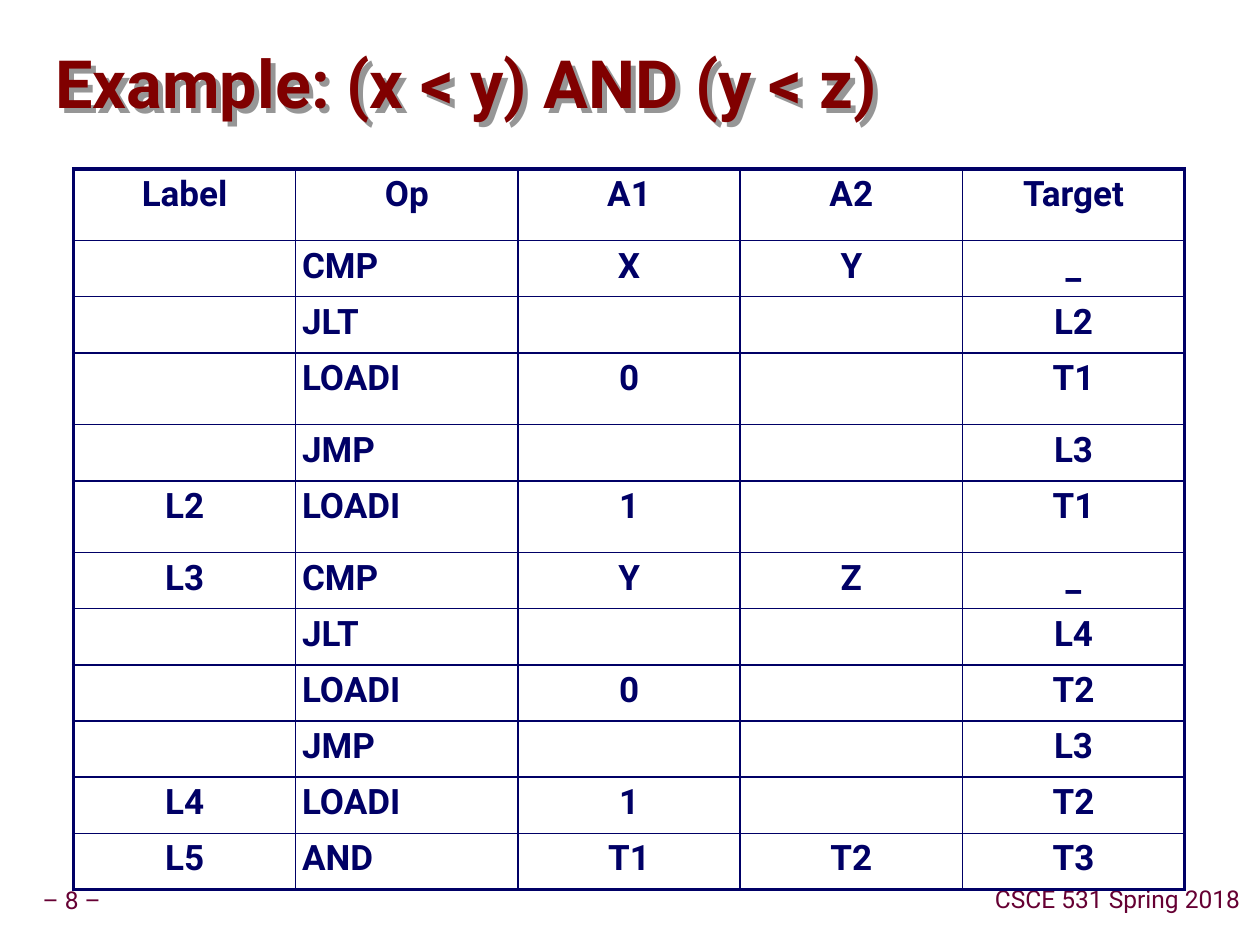
"""Build the slide showing quadruples for a short-circuit comparison."""
import dataclasses
import typing

import lxml.etree
import pptx
import pptx.dml.color
import pptx.enum.text
import pptx.oxml.ns
import pptx.util

Pt = pptx.util.Pt
qn = pptx.oxml.ns.qn
Align = pptx.enum.text.PP_ALIGN


@dataclasses.dataclass(frozen=True)
class TextStyle:
    """Look of a run and its line spacing."""
    size: float
    color: str
    bold: bool
    line_spacing: float


@dataclasses.dataclass(frozen=True)
class Theme:
    """Colours, type sizes and line widths of the slide."""
    font: str = "Roboto"
    title: TextStyle = TextStyle(38, "800000", True, 0.87)
    cell: TextStyle = TextStyle(20, "000066", True, 0.95)
    footer: TextStyle = TextStyle(14, "660033", False, 0.9)
    shadow: str = "969696"
    inner_line: float = 1
    outer_line: float = 2.25
    inset: float = 3.6


@dataclasses.dataclass(frozen=True)
class Label:
    """A text box with its place in points."""
    text: str
    left: float
    top: float
    width: float
    height: float
    style: TextStyle
    align: Align
    inset: float
    wrap: bool


class Quad(typing.NamedTuple):
    """One row of the instruction table."""
    label: str
    op: str
    a1: str
    a2: str
    target: str
    height: float = 32.1


THEME = Theme()
TALL = 41
TITLE = Label("Example: (x < y) AND (y < z)", 31.7, 19.4, 686, 61.2,
              THEME.title, Align.LEFT, 0, True)
FOOTERS = (
    Label("– 8 –", 17.3, 504, 47.5, 22.3, THEME.footer, Align.CENTER, THEME.inset, False),
    Label("CSCE 531 Spring 2018", 561.6, 503.3, 154, 22.3,
          THEME.footer, Align.CENTER, THEME.inset, False),
)
QUADS = (
    Quad("Label", "Op", "A1", "A2", "Target", TALL),
    Quad("", "CMP", "X", "Y", "_"),
    Quad("", "JLT", "", "", "L2"),
    Quad("", "LOADI", "0", "", "T1", TALL),
    Quad("", "JMP", "", "", "L3"),
    Quad("L2", "LOADI", "1", "", "T1", TALL),
    Quad("L3", "CMP", "Y", "Z", "_"),
    Quad("", "JLT", "", "", "L4"),
    Quad("", "LOADI", "0", "", "T2"),
    Quad("", "JMP", "", "", "L3"),
    Quad("L4", "LOADI", "1", "", "T2"),
    Quad("L5", "AND", "T1", "T2", "T3"),
)
COLUMNS = 5
COLUMN_WIDTH = 127
TABLE_LEFT, TABLE_TOP = 42, 96.5


def write_text(frame, text: str, style: TextStyle, align: Align) -> None:
    """Write one styled run into the first paragraph of a frame."""
    paragraph = frame.paragraphs[0]
    paragraph.alignment = align
    paragraph.line_spacing = style.line_spacing
    run = paragraph.add_run()
    run.text = text
    run.font.name = THEME.font
    run.font.size = Pt(style.size)
    run.font.bold = style.bold
    run.font.color.rgb = pptx.dml.color.RGBColor.from_string(style.color)


def set_insets(holder, inset: float) -> None:
    """Give a frame or cell the same margin on every side."""
    holder.margin_left = holder.margin_right = Pt(inset)
    holder.margin_top = holder.margin_bottom = Pt(inset)


def add_label(slide, label: Label):
    """Add a text box and return it."""
    shape = slide.shapes.add_textbox(
        Pt(label.left), Pt(label.top), Pt(label.width), Pt(label.height))
    frame = shape.text_frame
    frame.word_wrap = label.wrap
    frame.vertical_anchor = pptx.enum.text.MSO_ANCHOR.MIDDLE
    set_insets(frame, label.inset)
    write_text(frame, label.text, label.style, label.align)
    return shape


def add_text_shadow(shape) -> None:
    """Cast a hard shadow to the lower right of unfilled text."""
    shape.shadow.inherit = False
    effects = shape._element.spPr.find(qn("a:effectLst"))
    shadow = lxml.etree.SubElement(
        effects, qn("a:outerShdw"), dist=str(Pt(4)), dir="2700000", algn="ctr", rotWithShape="0")
    lxml.etree.SubElement(shadow, qn("a:srgbClr"), val=THEME.shadow)


def add_border(cell, side: str, width: float) -> None:
    """Draw one border of a cell; side is L, R, T or B."""
    properties = cell._tc.get_or_add_tcPr()
    line = lxml.etree.SubElement(properties, qn(f"a:ln{side}"), w=str(Pt(width)))
    fill = lxml.etree.SubElement(line, qn("a:solidFill"))
    lxml.etree.SubElement(fill, qn("a:srgbClr"), val=THEME.cell.color)


def add_quad_table(slide, quads: typing.Sequence[Quad]) -> None:
    """Add the instruction table with a heavy outer frame."""
    table = slide.shapes.add_table(
        len(quads), COLUMNS, Pt(TABLE_LEFT), Pt(TABLE_TOP), Pt(COLUMNS * COLUMN_WIDTH),
        Pt(sum(quad.height for quad in quads))).table
    table.first_row = table.horz_banding = False
    for column in table.columns:
        column.width = Pt(COLUMN_WIDTH)
    for row, quad in enumerate(quads):
        table.rows[row].height = Pt(quad.height)
        for column, text in enumerate(quad[:COLUMNS]):
            cell = table.cell(row, column)
            set_insets(cell, THEME.inset)
            outer = {"L": column == 0, "R": column == COLUMNS - 1,
                     "T": row == 0, "B": row == len(quads) - 1}
            for side, heavy in outer.items():
                add_border(cell, side, THEME.outer_line if heavy else THEME.inner_line)
            cell.fill.background()
            if text:
                left_aligned = column == 1 and row > 0
                write_text(cell.text_frame, text, THEME.cell,
                           Align.LEFT if left_aligned else Align.CENTER)


def main() -> None:
    """Build and save the presentation."""
    presentation = pptx.Presentation()
    presentation.slide_width, presentation.slide_height = Pt(720), Pt(540)
    slide = presentation.slides.add_slide(presentation.slide_layouts[6])
    for footer in FOOTERS:
        add_label(slide, footer)
    add_text_shadow(add_label(slide, TITLE))
    add_quad_table(slide, QUADS)
    presentation.save("out.pptx")


if __name__ == "__main__":
    main()
